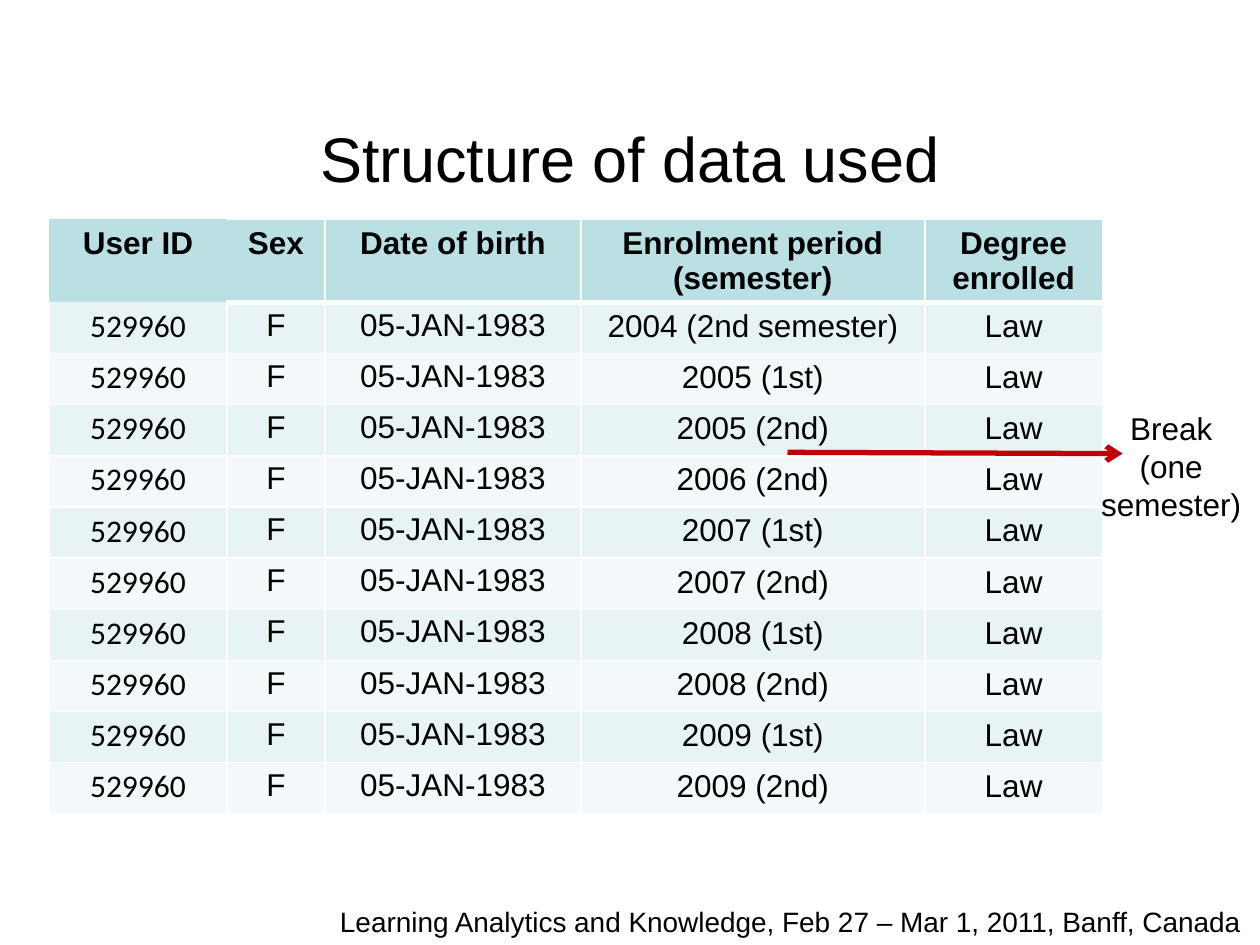
import dataclasses

import pptx
import pptx.dml.color
import pptx.enum.shapes
import pptx.enum.text
import pptx.oxml
import pptx.oxml.ns
import pptx.util

ALIGN = pptx.enum.text.PP_ALIGN
ANCHOR = pptx.enum.text.MSO_ANCHOR
AUTO_SIZE = pptx.enum.text.MSO_AUTO_SIZE


@dataclasses.dataclass(frozen=True)
class Theme:
    font: str = "Arial"
    id_font: str = "Calibri"
    title_size: int = 36
    text_size: int = 18
    footer_size: int = 16
    text: str = "000000"
    header: str = "BBE0E3"
    bands: tuple = ("E7F3F4", "F3F9FA")
    border: str = "FFFFFF"
    arrow: str = "C00000"
    grid_columns: int = 100
    grid_rows: int = 75


def color(value):
    return pptx.dml.color.RGBColor.from_string(value)


def write_text(frame, text, *, size, font, fill, bold=False, align=ALIGN.CENTER):
    paragraph = frame.paragraphs[0]
    paragraph.alignment = align
    run = paragraph.add_run()
    run.text = text
    run.font.size = pptx.util.Pt(size)
    run.font.name = font
    run.font.bold = bold
    run.font.color.rgb = color(fill)


def element(tag, parent, **attributes):
    child = pptx.oxml.parse_xml(f'<a:{tag} {pptx.oxml.ns.nsdecls("a")}/>')
    for name, value in attributes.items():
        child.set(name, str(value))
    parent.append(child)
    return child


def set_borders(cell, widths, fill):
    properties = cell._tc.get_or_add_tcPr()
    for position, (side, width) in enumerate(widths.items()):
        line = element(side, properties, w=pptx.util.Pt(width))
        properties.insert(position, line)
        if width:
            element("srgbClr", element("solidFill", line), val=fill)
        else:
            element("noFill", line)


class SlideBuilder:
    def __init__(self, presentation, theme):
        self.theme = theme
        self.column = presentation.slide_width / theme.grid_columns
        self.row = presentation.slide_height / theme.grid_rows
        self.slide = presentation.slides.add_slide(presentation.slide_layouts[5])

    def columns(self, count):
        return round(count * self.column)

    def rows(self, count):
        return round(count * self.row)

    def box(self, left, top, width, height):
        return (self.columns(left), self.rows(top),
                self.columns(width), self.rows(height))

    def title(self, text, *place):
        shape = self.slide.shapes.title
        shape.left, shape.top, shape.width, shape.height = self.box(*place)
        shape.text_frame.vertical_anchor = ANCHOR.MIDDLE
        write_text(shape.text_frame, text, size=self.theme.title_size,
                   font=self.theme.font, fill=self.theme.text)

    def text(self, text, *place, size, align, wrap=True):
        shape = self.slide.shapes.add_textbox(*self.box(*place))
        frame = shape.text_frame
        frame.word_wrap = wrap
        frame.auto_size = AUTO_SIZE.SHAPE_TO_FIT_TEXT
        write_text(frame, text, size=size, font=self.theme.font,
                   fill=self.theme.text, align=align)

    def arrow(self, left, top, right, bottom):
        connector = self.slide.shapes.add_connector(
            pptx.enum.shapes.MSO_CONNECTOR.STRAIGHT,
            self.columns(left), self.rows(top),
            self.columns(right), self.rows(bottom))
        connector.line.color.rgb = color(self.theme.arrow)
        connector.line.width = pptx.util.Pt(3)
        element("tailEnd", connector.line._get_or_add_ln(), type="arrow")
        element("effectLst", connector._element.spPr)

    def table(self, records, widths, row_height, *place):
        shape = self.slide.shapes.add_table(
            len(records), len(widths), *self.box(*place))
        table = shape.table
        for column, width in zip(table.columns, widths):
            column.width = self.columns(width)
        for row in table.rows:
            row.height = self.rows(row_height)
        shape.height = self.rows(place[3])
        for row_index, record in enumerate(records):
            for column_index, value in enumerate(record):
                self.cell(table.cell(row_index, column_index), value,
                          row_index, column_index)

    def cell(self, cell, value, row_index, column_index):
        theme = self.theme
        is_header = row_index == 0
        is_id = column_index == 0
        cell.fill.solid()
        cell.fill.fore_color.rgb = color(
            theme.header if is_header else theme.bands[(row_index - 1) % 2])
        widths = {"lnL": 1, "lnR": 1, "lnT": 1, "lnB": 1}
        if is_header and is_id:
            widths = dict.fromkeys(widths, 0)
        elif is_header:
            widths["lnB"] = 3
            if column_index == 1:
                widths["lnL"] = 0
        elif row_index == 1:
            widths["lnT"] = 0 if is_id else 3
        set_borders(cell, widths, theme.border)
        if not is_header and column_index < 3:
            cell.margin_left = cell.margin_right = self.columns(0.8)
            cell.margin_top = cell.margin_bottom = self.rows(0.4)
        write_text(cell.text_frame, value, size=theme.text_size,
                   font=theme.id_font if is_id and not is_header else theme.font,
                   fill=theme.text, bold=is_header)


def main():
    presentation = pptx.Presentation()
    presentation.slide_width = pptx.util.Inches(10)
    presentation.slide_height = pptx.util.Inches(7.5)
    theme = Theme()
    builder = SlideBuilder(presentation, theme)

    header = ("User ID", "Sex", "Date of birth",
              "Enrolment period (semester)", "Degree enrolled")
    periods = ("2004 (2nd semester)", "2005 (1st)", "2005 (2nd)", "2006 (2nd)",
               "2007 (1st)", "2007 (2nd)", "2008 (1st)", "2008 (2nd)",
               "2009 (1st)", "2009 (2nd)")
    enrolments = [("529960", "F", "05-JAN-1983", period, "Law")
                  for period in periods]

    builder.title("Structure of data used", 5, 6.2, 90, 12.5)
    builder.table([header, *enrolments], (14.1, 7.8, 20.3, 27.3, 14.1), 4.06,
                  3.9, 17.4, 83.6, 50.6)
    builder.arrow(62.5, 35.9, 89.1, 36)
    builder.text("Break (one semester)", 85.9, 32, 14.1, 10.1,
                 size=theme.text_size, align=ALIGN.CENTER)
    builder.text("Learning Analytics and Knowledge, Feb 27 – Mar 1, 2011, "
                 "Banff, Canada", 26, 71.3, 74, 3.7,
                 size=theme.footer_size, align=ALIGN.LEFT, wrap=False)
    presentation.save("out.pptx")


if __name__ == "__main__":
    main()
